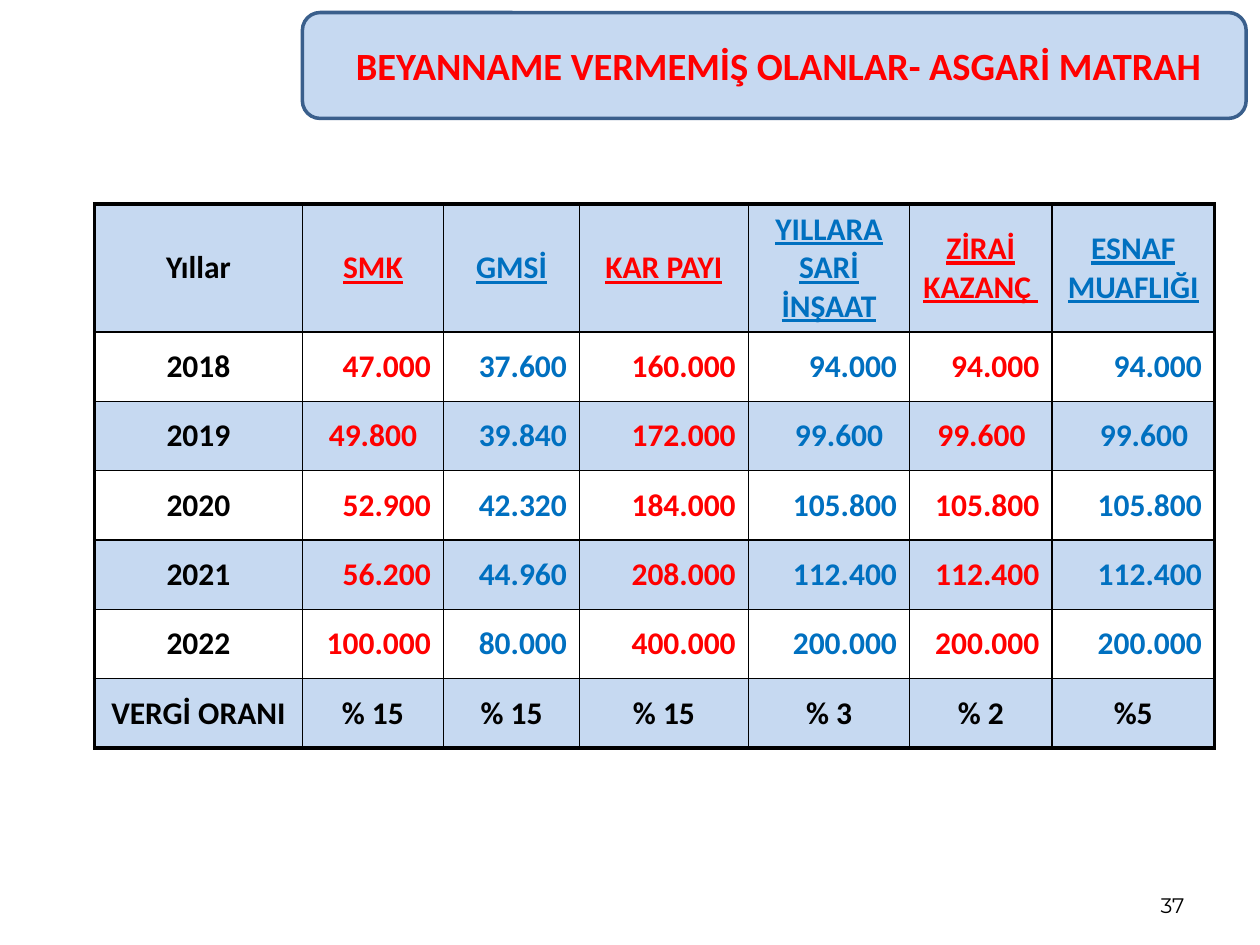
from dataclasses import dataclass
from itertools import product

from lxml import etree
from pptx import Presentation
from pptx import util as u
from pptx.dml.color import RGBColor
from pptx.enum import shapes, text
from pptx.oxml.ns import qn


@dataclass(frozen=True)
class Theme:
    font: str = "Calibri"
    page_font: str = "Montserrat"
    black: str = "000000"
    red: str = "FF0000"
    blue: str = "0070C0"
    band: str = "C6D9F1"
    edge: str = "3A5F8C"
    title: int = 22
    body: int = 18
    page: int = 12
    thin: float = 1
    thick: float = 2.25


@dataclass(frozen=True)
class Box:
    """Place and size as shares of the slide's width and height."""
    left: float
    top: float
    width: float
    height: float

    def emu(self) -> tuple:
        return (wide(self.left), high(self.top),
                wide(self.width), high(self.height))


@dataclass(frozen=True)
class Column:
    head: str
    width: float  # inches
    values: tuple
    rate: str
    inset: tuple = ()  # years set further in from the right edge


THEME = Theme()
SLIDE_W, SLIDE_H = u.Inches(10), u.Inches(7.5)
BANNER = Box(0.24, 0.1 / 7.5, 0.749, 0.84 / 7.5)
TITLE = Box(0.248, 0.05 / 7.5, 0.74, 0.94 / 7.5)
TABLE = Box(0.075, 1.62 / 7.5, 0.89, 4.11 / 7.5)
PAGE = Box(0.717, 6.83 / 7.5, 0.233, 0.5 / 7.5)
HEAD_H, ROW_H = 0.81, 0.55

YEARS = ("2018", "2019", "2020", "2021", "2022")
SHARED = ("94.000", "99.600", "105.800", "112.400", "200.000")
COLUMNS = (
    Column("Yıllar", 1.65, YEARS, "VERGİ ORANI"),
    Column("SMK", 1.12, ("47.000", "49.800", "52.900", "56.200", "100.000"), "% 15", ("2019",)),
    Column("GMSİ", 1.08, ("37.600", "39.840", "42.320", "44.960", "80.000"), "% 15"),
    Column("KAR PAYI", 1.34, ("160.000", "172.000", "184.000", "208.000", "400.000"), "% 15"),
    Column("YILLARA SARİ İNŞAAT", 1.28, SHARED, "% 3", ("2019",)),
    Column("ZİRAİ KAZANÇ ", 1.13, SHARED, "% 2", ("2019",)),
    Column("ESNAF MUAFLIĞI", 1.29, SHARED, "%5", ("2019",)),
)


def wide(share: float) -> int:
    return round(SLIDE_W * share)


def high(share: float) -> int:
    return round(SLIDE_H * share)


def write(frame, words: str, size: int, color: str, align,
          name: str = THEME.font, bold: bool = True, under: bool = False) -> None:
    para = frame.paragraphs[0]
    para.text = words
    para.alignment = align
    font = para.font
    font.name, font.size, font.bold = name, u.Pt(size), bold
    font.color.rgb = RGBColor.from_string(color)
    if under:
        font.underline = True


def border(cell, side: str, width: float) -> None:
    line = etree.SubElement(cell._tc.get_or_add_tcPr(), qn(f"a:ln{side}"), w=str(u.Pt(width)))
    fill = etree.SubElement(line, qn("a:solidFill"))
    etree.SubElement(fill, qn("a:srgbClr"), val=THEME.black)


def draw_title(slide) -> None:
    banner = slide.shapes.add_shape(shapes.MSO_SHAPE.ROUNDED_RECTANGLE, *BANNER.emu())
    banner.shadow.inherit = False
    banner.fill.solid()
    banner.fill.fore_color.rgb = RGBColor.from_string(THEME.band)
    banner.line.color.rgb = RGBColor.from_string(THEME.edge)
    banner.line.width = u.Pt(2)

    # Bring the title in front of the banner
    title = slide.shapes.title
    banner._element.addnext(title._element)
    title.left, title.top, title.width, title.height = TITLE.emu()
    title.text_frame.vertical_anchor = text.MSO_ANCHOR.MIDDLE
    write(title.text_frame, "BEYANNAME VERMEMİŞ OLANLAR- ASGARİ MATRAH",
          THEME.title, THEME.red, text.PP_ALIGN.CENTER)


def draw_cell(cell, row: int, col: int) -> None:
    data, last_row, last_col = COLUMNS[col], len(YEARS) + 1, len(COLUMNS) - 1
    head, rate = row == 0, row == last_row
    words = (data.head, *data.values, data.rate)[row]

    # Heavy frame outside, thin grid inside
    outer = {"L": col == 0, "R": col == last_col, "T": head, "B": rate}
    for side, heavy in outer.items():
        border(cell, side, THEME.thick if heavy else THEME.thin)
    if row % 2 == 0:
        cell.fill.solid()
        cell.fill.fore_color.rgb = RGBColor.from_string(THEME.band)
    else:
        cell.fill.background()

    # Amount columns alternate red and blue
    plain = col == 0 or rate
    color = THEME.black if plain else (THEME.blue, THEME.red)[col % 2]
    align = text.PP_ALIGN.CENTER if plain or head else text.PP_ALIGN.RIGHT
    cell.vertical_anchor = text.MSO_ANCHOR.MIDDLE
    if not (head or rate) and YEARS[row - 1] in data.inset:
        cell.margin_right = u.Inches(0.21)
    write(cell.text_frame, words, THEME.body, color, align, under=head and col > 0)


def draw_table(slide) -> None:
    rows, cols = len(YEARS) + 2, len(COLUMNS)
    table = slide.shapes.add_table(rows, cols, *TABLE.emu()).table
    table.first_row = table.horz_banding = False
    for col, data in zip(table.columns, COLUMNS):
        col.width = u.Inches(data.width)
    for num, row in enumerate(table.rows):
        row.height = u.Inches(ROW_H if num else HEAD_H)
    for row, col in product(range(rows), range(cols)):
        draw_cell(table.cell(row, col), row, col)


def draw_page(slide) -> None:
    frame = slide.shapes.add_textbox(*PAGE.emu()).text_frame
    frame.word_wrap = True
    frame.vertical_anchor = text.MSO_ANCHOR.BOTTOM
    write(frame, "37", THEME.page, THEME.black, text.PP_ALIGN.RIGHT,
          THEME.page_font, bold=False)


def main() -> None:
    deck = Presentation()
    deck.slide_width, deck.slide_height = SLIDE_W, SLIDE_H
    slide = deck.slides.add_slide(deck.slide_layouts.get_by_name("Title Only"))
    draw_title(slide)
    draw_table(slide)
    draw_page(slide)
    deck.save("out.pptx")


if __name__ == "__main__":
    main()
